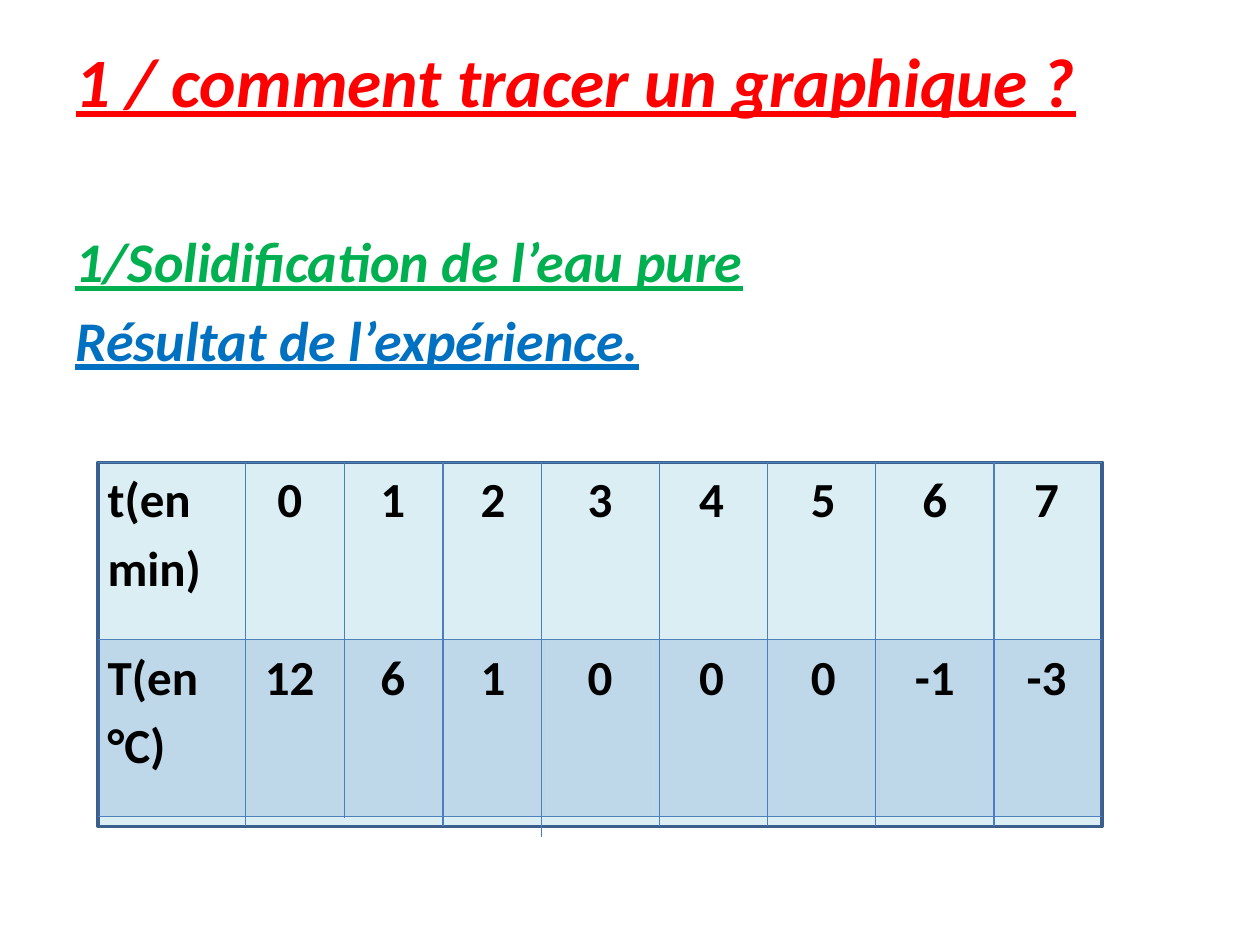
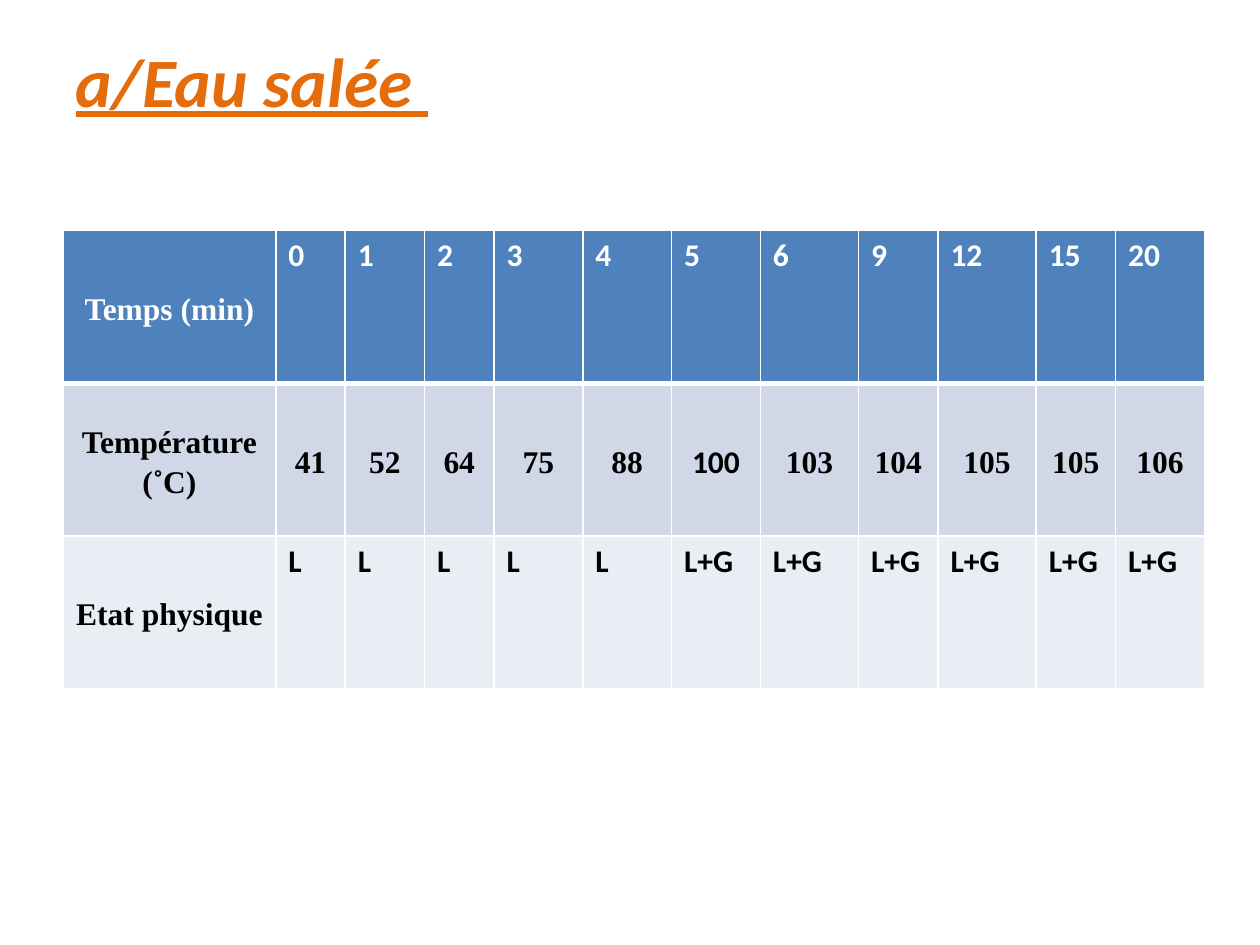
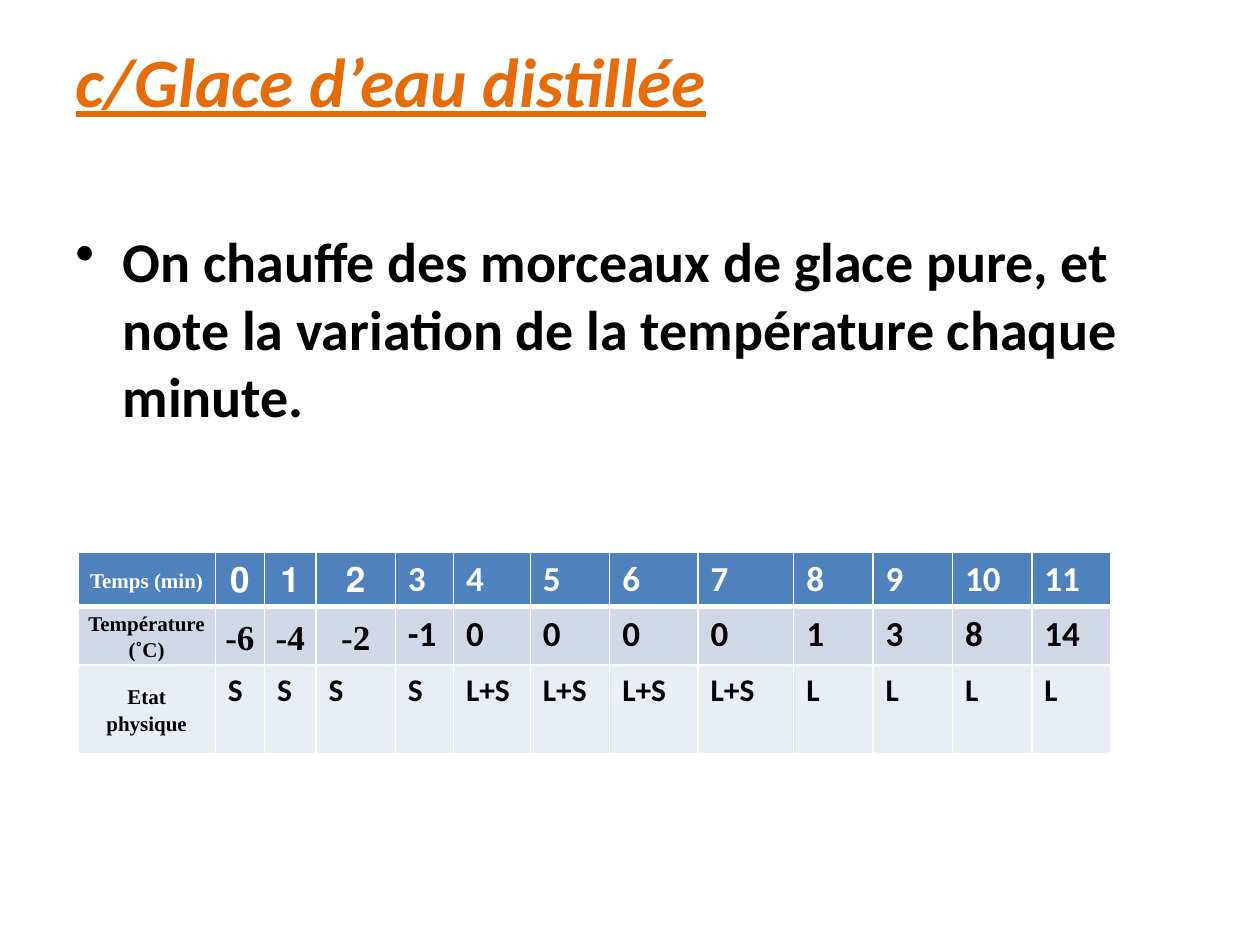
from dataclasses import dataclass

from lxml import etree
from pptx import Presentation
from pptx.dml.color import RGBColor
from pptx.enum.shapes import MSO_CONNECTOR, MSO_SHAPE
from pptx.enum.text import MSO_ANCHOR, MSO_AUTO_SIZE, PP_ALIGN
from pptx.oxml.ns import qn
from pptx.util import Cm, Pt

LEFT, CENTER = PP_ALIGN.LEFT, PP_ALIGN.CENTER
TOP, MIDDLE = MSO_ANCHOR.TOP, MSO_ANCHOR.MIDDLE
NO_AUTOFIT = MSO_AUTO_SIZE.NONE
RECTANGLE = MSO_SHAPE.RECTANGLE
STRAIGHT = MSO_CONNECTOR.STRAIGHT
TITLE_ONLY = 5
NO_TABLE_STYLE = "{2D5ABB26-0587-4C30-8999-92F81FD0307C}"


@dataclass(frozen=True)
class Theme:
    sans: str = "Calibri"
    serif: str = "Times New Roman"
    title_size: float = 39.6
    body_size: float = 32
    grid_size: float = 28
    large_size: float = 20
    medium_size: float = 18
    small_size: float = 12
    red: str = "FF0000"
    orange: str = "E46C0A"
    green: str = "00B050"
    blue: str = "0070C0"
    black: str = "000000"
    white: str = "FFFFFF"
    header: str = "4F81BD"
    band_dark: str = "D0D8E8"
    band_light: str = "E9EDF4"
    panel: str = "DBEEF4"
    panel_line: str = "3A5F8C"
    separator: str = "4B7EBC"


@dataclass(frozen=True)
class CellStyle:
    font: str
    size: float
    align: int = LEFT
    anchor: int = TOP
    snug: bool = False
    right_to_left: bool = False


@dataclass(frozen=True)
class Row:
    """One table row; groups pairs each cell style with the values it applies to."""
    height: float
    groups: tuple
    fill: str | None = None
    alpha: int = 100
    color: str = "000000"
    borders: tuple = ()


THEME = Theme()


def label(size):
    return CellStyle(THEME.serif, size, CENTER, MIDDLE, True, True)


def measure(size, font=THEME.serif):
    return CellStyle(font, size, CENTER, MIDDLE, True)


def plain(size):
    return CellStyle(THEME.sans, size)


def grid(align):
    return CellStyle(THEME.sans, THEME.grid_size, align, snug=True)


class Deck:
    def __init__(self, theme):
        self.theme = theme
        self.presentation = Presentation()
        self.presentation.slide_width = Cm(25.4)
        self.presentation.slide_height = Cm(19.05)
        self.slide = None

    def set_font(self, paragraph, name, size, color, emphasis=False):
        font = paragraph.font
        font.name, font.size, font.bold = name, Pt(size), True
        font.color.rgb = RGBColor.from_string(color)
        if emphasis:
            font.italic = font.underline = True

    def add_slide(self, title, color):
        layout = self.presentation.slide_layouts[TITLE_ONLY]
        self.slide = self.presentation.slides.add_slide(layout)
        shape = self.slide.shapes.title
        shape.left, shape.top = Cm(1.27), Cm(0.76)
        shape.width, shape.height = Cm(22.86), Cm(3.17)
        frame = shape.text_frame
        frame.text = title
        frame.auto_size = NO_AUTOFIT
        frame.vertical_anchor = TOP
        frame.margin_top = 0
        paragraph = frame.paragraphs[0]
        paragraph.alignment = LEFT
        self.set_font(paragraph, self.theme.sans, self.theme.title_size, color, True)

    def add_body(self, lines, emphasis=False, bullet=None):
        """Add the main text; lines pairs each text with its colour."""
        box = self.slide.shapes.add_textbox(Cm(1.27), Cm(4.45), Cm(22.86), Cm(12.57))
        frame = box.text_frame
        frame.word_wrap = True
        for index, (text, color) in enumerate(lines):
            paragraph = frame.add_paragraph() if index else frame.paragraphs[0]
            paragraph.text = text
            paragraph.space_before = Pt(6.4)
            self.set_font(paragraph, self.theme.sans, self.theme.body_size, color, emphasis)
            if bullet:
                properties = paragraph._p.get_or_add_pPr()
                properties.set("marL", str(Cm(0.95)))
                properties.set("indent", str(-Cm(0.95)))
                mark = etree.Element(qn("a:buChar"), char=bullet)
                properties.find(qn("a:defRPr")).addprevious(mark)

    def add_panel(self, left, top, width, height):
        shape = self.slide.shapes.add_shape(
            RECTANGLE, Cm(left), Cm(top), Cm(width), Cm(height))
        shape.shadow.inherit = False
        shape.fill.solid()
        shape.fill.fore_color.rgb = RGBColor.from_string(self.theme.panel)
        shape.line.color.rgb = RGBColor.from_string(self.theme.panel_line)
        shape.line.width = Pt(2)

    def add_separator(self, x, top, bottom):
        connector = self.slide.shapes.add_connector(
            STRAIGHT, Cm(x), Cm(top), Cm(x), Cm(bottom))
        connector.line.color.rgb = RGBColor.from_string(self.theme.separator)
        connector.line.width = Pt(0.75)
        etree.SubElement(connector._element.spPr, qn("a:effectLst"))

    def add_table(self, left, top, widths, rows):
        frame = self.slide.shapes.add_table(
            len(rows), len(widths), Cm(left), Cm(top),
            Cm(sum(widths)), Cm(sum(row.height for row in rows)))
        table = frame.table
        table.first_row = table.horz_banding = False
        table._tbl.tblPr.find(qn("a:tableStyleId")).text = NO_TABLE_STYLE
        for column, width in zip(table.columns, widths):
            column.width = Cm(width)
        for row_index, row in enumerate(rows):
            table.rows[row_index].height = Cm(row.height)
            entries = [(style, value) for style, values in row.groups for value in values]
            for column_index, (style, value) in enumerate(entries):
                cell = table.cell(row_index, column_index)
                self.write_cell(cell, style, value, row.color)
                self.paint_cell(cell, row)

    def write_cell(self, cell, style, value, color):
        cell.text = value
        cell.vertical_anchor = style.anchor
        paragraph = cell.text_frame.paragraphs[0]
        paragraph.alignment = style.align
        self.set_font(paragraph, style.font, style.size, color)
        if style.snug:
            cell.margin_left = cell.margin_right = Cm(0.19)
            cell.margin_top = cell.margin_bottom = 0
            paragraph.line_spacing = 1.15
        if style.right_to_left:
            paragraph._p.get_or_add_pPr().set("rtl", "1")

    def paint_cell(self, cell, row):
        properties = cell._tc.get_or_add_tcPr()
        if row.fill:
            cell.fill.solid()
            cell.fill.fore_color.rgb = RGBColor.from_string(row.fill)
            if row.alpha < 100:
                color = properties.find(f"{qn('a:solidFill')}/{qn('a:srgbClr')}")
                etree.SubElement(color, qn("a:alpha"), val=str(row.alpha * 1000))
        else:
            cell.fill.background()
        for index, (side, color, width) in enumerate(row.borders):
            line = etree.Element(qn(f"a:ln{side}"), w=str(Pt(width)))
            fill = etree.SubElement(line, qn("a:solidFill"))
            etree.SubElement(fill, qn("a:srgbClr"), val=color)
            properties.insert(index, line)

    def add_state_table(self, left, top, widths, heights, groups):
        """Add a table of time, temperature and physical state."""
        theme = self.theme
        sides = (("L", theme.white, 1), ("R", theme.white, 1))
        thin = sides + (("B", theme.white, 1),)
        header = sides + (("T", theme.white, 1), ("B", theme.white, 3))
        looks = (
            (theme.header, theme.white, header),
            (theme.band_dark, theme.black, thin),
            (theme.band_light, theme.black, thin),
        )
        rows = [Row(height, row_groups, fill, color=color, borders=borders)
                for height, row_groups, (fill, color, borders)
                in zip(heights, groups, looks)]
        self.add_table(left, top, widths, rows)


def build_pure_water(deck):
    theme = deck.theme
    deck.add_slide("1 / comment tracer un graphique ?", theme.red)
    deck.add_body([("1/Solidification de l’eau pure", theme.green),
                   ("Résultat de l’expérience.", theme.blue)], emphasis=True)
    left, top, bottom = 1.98, 9.32, 16.66
    deck.add_panel(left, top, 20.24, bottom - top)
    borders = (("T", theme.header, 1), ("B", theme.header, 1))
    times = ["0", "1", "2", "3", "4", "5", "6", "7"]
    temperatures = ["12", "6", "1", "0", "0", "0", "-1", "-3"]
    deck.add_table(left, top, [2.77, 2.18, 1.98, 2.06] + [2.25] * 5, [
        Row(3.57, ((grid(LEFT), ["t(en min)"]), (grid(CENTER), times)),
            borders=borders),
        Row(3.57, ((grid(LEFT), ["T(en °C)"]), (grid(CENTER), temperatures)),
            theme.header, 20, borders=borders),
    ])
    uneven_bottoms = {6.95: 16.48, 10.92: 16.87}
    for x in (4.95, 6.95, 8.93, 10.92, 13.3, 15.47, 17.65, 20.04):
        deck.add_separator(x, top, uneven_bottoms.get(x, bottom))


def build_salt_water(deck):
    theme = deck.theme
    size = theme.medium_size
    deck.add_slide("a/Eau salée ", theme.orange)
    times = ["0", "1", "2", "3", "4", "5", "6", "9", "12", "15", "20"]
    deck.add_state_table(
        1.27, 4.65,
        [4.29, 1.4, 1.6, 1.4, 1.79, 1.79, 1.79, 1.98, 1.6, 1.98, 1.6, 1.79],
        [3.08] * 3,
        (
            ((label(size), ["Temps (min)"]), (plain(size), times)),
            ((label(size), ["Température (˚C)"]),
             (measure(size), ["41", "52", "64", "75", "88"]),
             (measure(size, theme.sans), ["100"]),
             (measure(size), ["103", "104", "105", "105", "106"])),
            ((label(size), ["Etat physique"]),
             (plain(size), ["L"] * 5 + ["L+G"] * 6)),
        ))


def build_distilled_ice(deck):
    theme = deck.theme
    small, medium, large = theme.small_size, theme.medium_size, theme.large_size
    deck.add_slide("c/Glace d’eau distillée", theme.orange)
    deck.add_body([("On chauffe des morceaux de glace pure, et note la variation "
                    "de la température chaque minute.", theme.black)], bullet="•")
    deck.add_state_table(
        1.57, 11.13,
        [2.77, 0.99, 1.04, 1.6, 1.17, 1.55, 1.6, 1.78, 1.93] + [1.6] * 4,
        [1.07, 1.14, 1.8],
        (
            ((label(small), ["Temps (min)"]), (label(large), ["0", "1", "2"]),
             (plain(large), ["3", "4", "5", "6", "7", "8", "9", "10", "11"])),
            ((label(small), ["Température (˚C)"]),
             (measure(large), ["-6", "-4", "-2"]),
             (plain(large), ["-1", "0", "0", "0", "0", "1", "3", "8", "14"])),
            ((label(small), ["Etat physique"]),
             (plain(medium), ["S"] * 4 + ["L+S"] * 4 + ["L"] * 4)),
        ))


def main():
    deck = Deck(THEME)
    build_pure_water(deck)
    build_salt_water(deck)
    build_distilled_ice(deck)
    deck.presentation.save("out.pptx")


if __name__ == "__main__":
    main()
